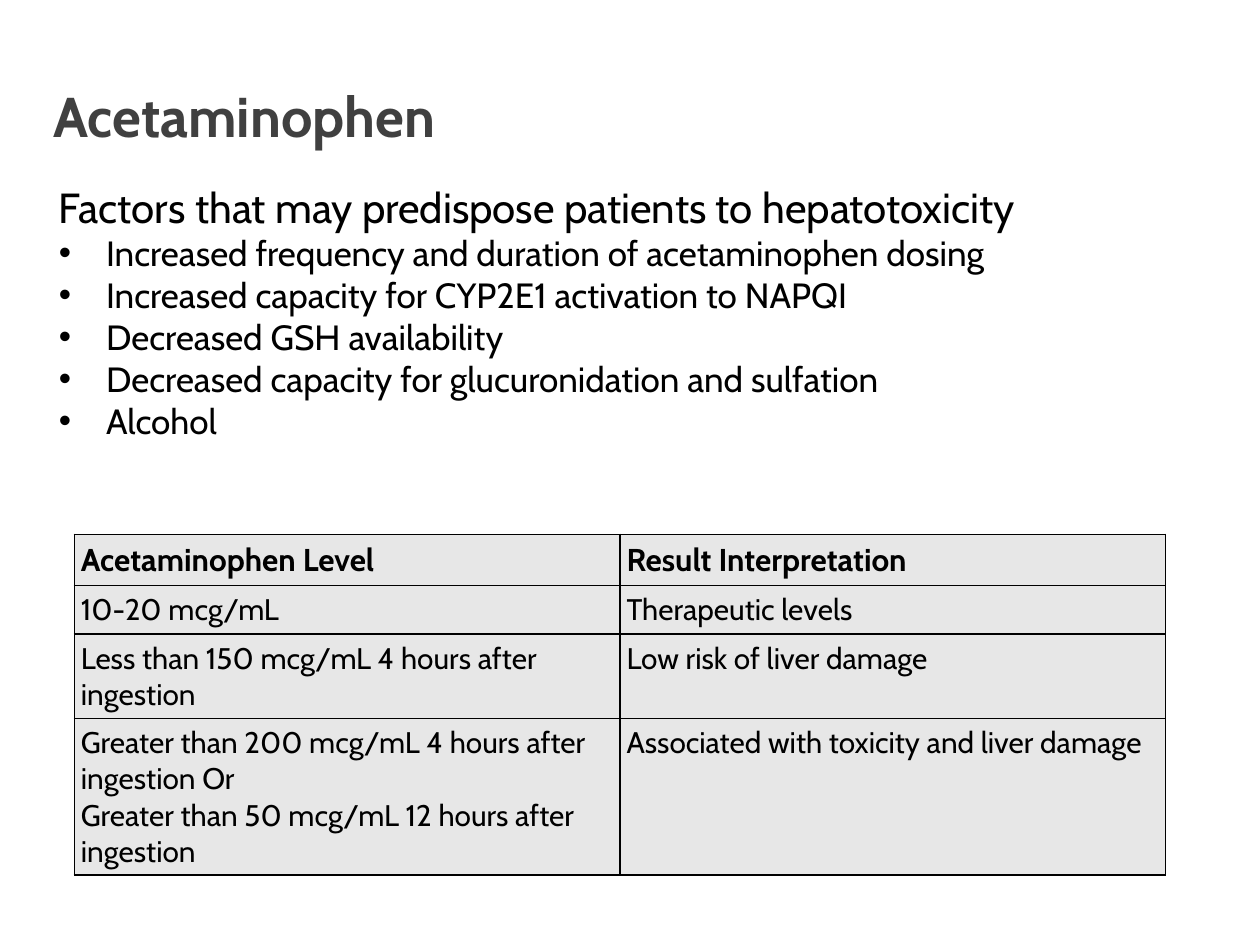
from lxml import etree
from pptx import Presentation
from pptx.dml.color import RGBColor
from pptx.enum import text
from pptx.oxml import ns
from pptx.util import Cm, Pt

FONT = "Cabin"
COLORS = {"title": "404040", "ink": "000000", "cell": "E7E7E7"}

FACTORS = [
    "Increased frequency and duration of acetaminophen dosing",
    "Increased capacity for CYP2E1 activation to NAPQI",
    "Decreased GSH availability",
    "Decreased capacity for glucuronidation and sulfation",
    "Alcohol",
]
LEVELS = [
    ("Acetaminophen Level", "Result Interpretation"),
    ("10-20 mcg/mL", "Therapeutic levels"),
    ("Less than 150 mcg/mL 4 hours after ingestion", "Low risk of liver damage"),
    ("Greater than 200 mcg/mL 4 hours after ingestion Or\n"
     "Greater than 50 mcg/mL 12 hours after ingestion",
     "Associated with toxicity and liver damage"),
]
ROW_HEIGHTS = [1.03, 0.98, 1.69, 3.16]


def style(para, size, color="ink", bold=False):
    para.alignment = text.PP_ALIGN.LEFT
    font = para.font
    font.name, font.size, font.bold = FONT, Pt(size), bold
    font.color.rgb = RGBColor.from_string(COLORS[color])


def add_bullet(para):
    properties = para._p.get_or_add_pPr()
    properties.set("marL", str(Cm(0.95)))
    properties.set("indent", str(Cm(-0.95)))
    etree.SubElement(properties, ns.qn("a:buFont")).set("typeface", "Arial")
    etree.SubElement(properties, ns.qn("a:buChar")).set("char", "•")


def add_text_box(page, left, top, width, height):
    frame = page.shapes.add_textbox(Cm(left), Cm(top), Cm(width), Cm(height)).text_frame
    frame.word_wrap = True
    return frame


def add_title(page):
    frame = add_text_box(page, 0.51, 1.52, 9.19, 1.63)
    frame.margin_left = Cm(0.56)
    frame.text = "Acetaminophen"
    style(frame.paragraphs[0], 32, "title", bold=True)


def add_factors(page):
    frame = add_text_box(page, 0.94, 3.53, 22.76, 6.58)
    frame.text = "Factors that may predispose patients to hepatotoxicity"
    style(frame.paragraphs[0], 24)
    for factor in FACTORS:
        para = frame.add_paragraph()
        para.text = factor
        add_bullet(para)
        style(para, 20)


def add_borders(cell):
    properties = cell._tc.get_or_add_tcPr()
    for index, side in enumerate(("lnL", "lnR", "lnT", "lnB")):
        line = etree.Element(ns.qn(f"a:{side}"), w=str(Pt(1)))
        fill = etree.SubElement(line, ns.qn("a:solidFill"))
        etree.SubElement(fill, ns.qn("a:srgbClr")).set("val", COLORS["ink"])
        properties.insert(index, line)


def fill_cell(cell, wording, heading):
    cell.text = wording
    cell.margin_left = cell.margin_right = Cm(0.13)
    cell.margin_top = cell.margin_bottom = Cm(0.13)
    cell.fill.solid()
    cell.fill.fore_color.rgb = RGBColor.from_string(COLORS["cell"])
    add_borders(cell)
    for para in cell.text_frame.paragraphs:
        style(para, 18 if heading else 17, bold=heading)


def add_levels_table(page):
    table = page.shapes.add_table(len(LEVELS), 2, Cm(1.5), Cm(10.77),
                                  Cm(22), Cm(sum(ROW_HEIGHTS))).table
    for row, height, wordings in zip(table.rows, ROW_HEIGHTS, LEVELS):
        row.height = Cm(height)
        for cell, wording in zip(row.cells, wordings):
            fill_cell(cell, wording, heading=wordings is LEVELS[0])


def main():
    deck = Presentation()
    deck.slide_width, deck.slide_height = Cm(25.4), Cm(19.05)
    page = deck.slides.add_slide(deck.slide_layouts[6])
    add_factors(page)
    add_levels_table(page)
    add_title(page)
    deck.save("out.pptx")


if __name__ == "__main__":
    main()
